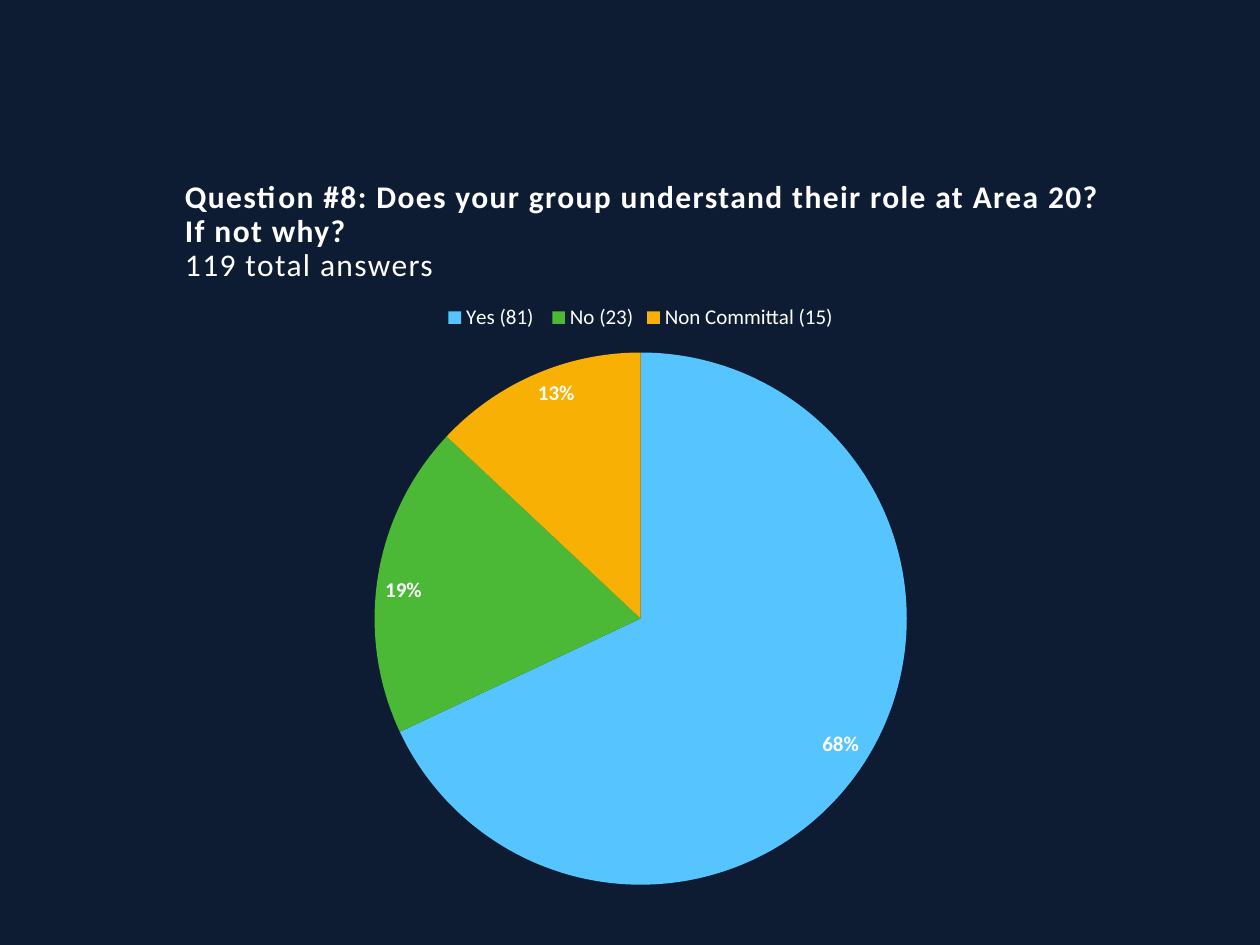
from pptx import Presentation
from pptx.chart.data import CategoryChartData
from pptx.dml.color import RGBColor
from pptx.enum.chart import XL_CHART_TYPE, XL_LABEL_POSITION, XL_LEGEND_POSITION
from pptx.enum.text import MSO_ANCHOR
from pptx.util import Inches, Pt

PIE = XL_CHART_TYPE.PIE
LEGEND_TOP = XL_LEGEND_POSITION.TOP
INSIDE_END = XL_LABEL_POSITION.INSIDE_END
BOTTOM = MSO_ANCHOR.BOTTOM

FONT = "Calibri"
NAVY = "0D1C32"
WHITE = "FFFFFF"
TITLE_LINES = [
    ("Question #8: Does your group understand their role at Area 20? If not why?", True),
    ("119 total answers", False),
]
ANSWERS = [
    ("Yes (81) ", 68, "56C5FF"),
    ("No (23)", 19, "4BB836"),
    ("Non Committal (15)", 13, "F8B004"),
]
TITLE_AREA = (1.37, 1.44, 7.5, 0.86)
CHART_AREA = (1, 2.31, 8.17, 4.85)


def color(value):
    """Turn a hex string into a colour."""
    return RGBColor.from_string(value)


def style(font, size, bold=False):
    """Apply the slide's typeface in white."""
    font.name = FONT
    font.size = Pt(size)
    font.bold = bold
    font.color.rgb = color(WHITE)


def add_title(page):
    """Add the question and the answer count."""
    box = page.shapes.add_textbox(*map(Inches, TITLE_AREA))
    frame = box.text_frame
    frame.word_wrap = True
    frame.vertical_anchor = BOTTOM
    for index, (text, bold) in enumerate(TITLE_LINES):
        para = frame.add_paragraph() if index else frame.paragraphs[0]
        para.line_spacing = 0.9
        span = para.add_run()
        span.text = text
        style(span.font, 18, bold)
        span.font._element.set("spc", "80")


def add_pie(page):
    """Add the pie chart of answers."""
    data = CategoryChartData()
    data.categories = [name for name, _, _ in ANSWERS]
    data.add_series("Series 1", [share for _, share, _ in ANSWERS])
    chart = page.shapes.add_chart(PIE, *map(Inches, CHART_AREA), data).chart
    style(chart.font, 10)
    chart.has_title = False
    chart.has_legend = True
    chart.legend.position = LEGEND_TOP
    chart.legend.include_in_layout = False
    style(chart.legend.font, 12)

    plot = chart.plots[0]
    plot.vary_by_categories = True
    series = plot.series[0]
    for index, (_, _, shade) in enumerate(ANSWERS):
        fill = series.points[index].format.fill
        fill.solid()
        fill.fore_color.rgb = color(shade)

    labels = series.data_labels
    labels.show_value = False
    labels.show_percentage = True
    labels.number_format = "0%"
    labels.number_format_is_linked = False
    labels.position = INSIDE_END
    style(labels.font, 12, True)


def main():
    """Build and save the slide."""
    deck = Presentation()
    deck.slide_width = Inches(10)
    deck.slide_height = Inches(7.5)
    page = deck.slides.add_slide(deck.slide_layouts[6])
    page.background.fill.solid()
    page.background.fill.fore_color.rgb = color(NAVY)
    add_title(page)
    add_pie(page)
    deck.save("out.pptx")


if __name__ == "__main__":
    main()
